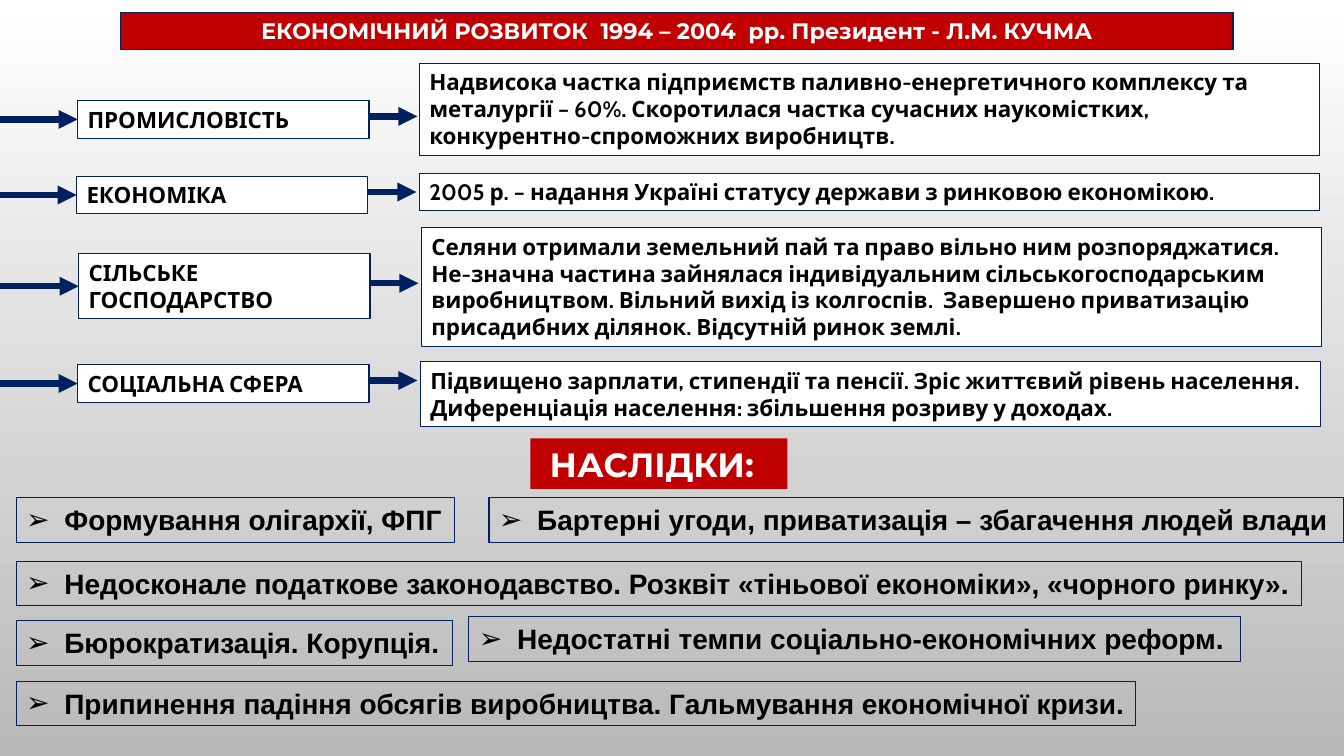
from dataclasses import dataclass
from lxml.etree import SubElement as Sub
from pptx import Presentation as Deck
from pptx.dml.color import RGBColor as Rgb
from pptx.enum.shapes import MSO_CONNECTOR as Link, MSO_SHAPE as Form
from pptx.enum.text import MSO_ANCHOR as Anchor, MSO_AUTO_SIZE as Auto, PP_ALIGN as Align
from pptx.oxml.ns import qn
from pptx.shapes.autoshape import Shape
from pptx.shapes.connector import Connector as Arrow
from pptx.slide import Slide
from pptx.util import Inches, Pt

HUES = {"red": "C00000", "navy": "002060", "white": "FFFFFF", "black": "000000", "grey": "B9B9B9"}


@dataclass(frozen=True)
class Style:
    font: str
    size: int
    ink: str = "black"
    fill: str | None = None
    edge: bool = True
    wrap: bool = True
    align: Align = Align.LEFT
    mark: str | None = None


@dataclass(frozen=True)
class Box:
    left: float
    top: float
    width: float
    height: float
    text: str


@dataclass(frozen=True)
class Row:
    label: Box
    fact: Box


TITLE = Style("Montserrat", 16, "white", "red", align=Align.CENTER)
HEAD = Style("Montserrat", 24, "white", "red", edge=False, wrap=False)
CARD = Style("Cabin", 16, fill="white")
POINT = Style("Arial", 20, wrap=False, mark="➢")

LABEL_W, FACT_W, POINT_H = 2.89, 8.93, 0.44
IN_LEN, OUT_LEN, OUT_RISE = 0.78, 0.48, 0.03

ROWS = [
    Row(Box(0.77, 1, LABEL_W, 0.37, "ПРОМИСЛОВІСТЬ"),
        Box(4.16, 0.63, FACT_W, 0.91,
            "Надвисока частка підприємств паливно-енергетичного комплексу та металургії – 60%. "
            "Скоротилася частка сучасних наукомістких, конкурентно-спроможних виробництв.")),
    Row(Box(0.76, 1.75, LABEL_W, 0.37, "ЕКОНОМІКА"),
        Box(4.16, 1.72, FACT_W, 0.37,
            "2005 р. – надання Україні статусу держави з ринковою економікою.")),
    Row(Box(0.78, 2.52, LABEL_W, 0.64, "СІЛЬСЬКЕ ГОСПОДАРСТВО"),
        Box(4.18, 2.26, FACT_W, 1.18,
            "Селяни отримали земельний пай та право вільно ним розпоряджатися. "
            "Не-значна частина зайнялася індивідуальним сільськогосподарським виробництвом. "
            "Вільний вихід із колгоспів.  Завершено приватизацію присадибних ділянок. "
            "Відсутній ринок землі.")),
    Row(Box(0.77, 3.62, LABEL_W, 0.37, "СОЦІАЛЬНА СФЕРА"),
        Box(4.17, 3.59, FACT_W, 0.64,
            "Підвищено зарплати, стипендії та пенсії. Зріс життєвий рівень населення. "
            "Диференціація населення: збільшення розриву у доходах.")),
]

POINTS = [
    Box(0.16, 4.94, 4.35, POINT_H, "Формування олігархії, ФПГ"),
    Box(4.85, 4.94, 8.48, POINT_H, "Бартерні угоди, приватизація – збагачення людей влади"),
    Box(0.16, 5.57, 12.75, POINT_H,
        "Недосконале податкове законодавство. Розквіт «тіньової економіки», «чорного ринку»."),
    Box(0.16, 6.16, 4.33, POINT_H, "Бюрократизація. Корупція."),
    Box(4.65, 6.12, 7.65, POINT_H, "Недостатні темпи соціально-економічних реформ."),
    Box(0.16, 6.76, 11.1, POINT_H,
        "Припинення падіння обсягів виробництва. Гальмування економічної кризи."),
]


def hue(name: str) -> Rgb:
    return Rgb.from_string(HUES[name])


def apply(item: object, values: dict[str, object]) -> None:
    for key, value in values.items():
        setattr(item, key, value)


def draw_box(slide: Slide, box: Box, style: Style) -> Shape:
    shape = slide.shapes.add_shape(Form.RECTANGLE, Inches(box.left), Inches(box.top),
                                   Inches(box.width), Inches(box.height))
    shape.shadow.inherit = False
    if style.fill:
        shape.fill.solid()
        shape.fill.fore_color.rgb = hue(style.fill)
    else:
        shape.fill.background()
    if style.edge:
        shape.line.color.rgb = hue("navy")
        shape.line.width = Pt(0.75)
    else:
        shape.line.fill.background()
    frame = shape.text_frame
    apply(frame, {"text": box.text, "word_wrap": style.wrap,
                  "auto_size": Auto.SHAPE_TO_FIT_TEXT, "vertical_anchor": Anchor.TOP})
    para = frame.paragraphs[0]
    para.alignment = style.align
    if style.mark:
        props = para._p.get_or_add_pPr()
        indent = Inches(0.38)
        props.set("marL", str(indent))
        props.set("indent", str(-indent))
        Sub(props, qn("a:buFont")).set("typeface", style.font)
        Sub(props, qn("a:buChar")).set("char", style.mark)
    font = para.runs[0].font
    apply(font, {"name": style.font, "size": Pt(style.size), "bold": True})
    font.color.rgb = hue(style.ink)
    return shape


def draw_arrow(slide: Slide, start: float, end: float, level: float) -> Arrow:
    arrow = slide.shapes.add_connector(Link.STRAIGHT, Inches(start), Inches(level),
                                       Inches(end), Inches(level))
    arrow.line.color.rgb = hue("navy")
    arrow.line.width = Pt(4.5)
    Sub(arrow.line._get_or_add_ln(), qn("a:tailEnd")).set("type", "triangle")
    Sub(arrow._element.spPr, qn("a:effectLst"))
    return arrow


def draw_row(slide: Slide, row: Row) -> None:
    draw_box(slide, row.fact, CARD)
    label = row.label
    shape = draw_box(slide, label, CARD)
    mid, right = label.top + label.height / 2, label.left + label.width
    entry = draw_arrow(slide, label.left - IN_LEN, label.left, mid)
    entry.end_connect(shape, 1)
    draw_arrow(slide, right, right + OUT_LEN, mid - OUT_RISE)


def paint_back(slide: Slide) -> None:
    fill = slide.background.fill
    fill.gradient()
    fill.gradient_angle = 270
    for stop, name, place in zip(fill.gradient_stops, ("white", "grey"), (0, 1)):
        stop.color.rgb = hue(name)
        stop.position = place


def main() -> None:
    deck = Deck()
    apply(deck, {"slide_width": Inches(13.33), "slide_height": Inches(7.5)})
    slide = deck.slides.add_slide(deck.slide_layouts[6])
    paint_back(slide)
    draw_box(slide, Box(1.2, 0.12, 11.03, 0.37,
                        "ЕКОНОМІЧНИЙ РОЗВИТОК  1994 – 2004  рр. Президент - Л.М. КУЧМА"), TITLE)
    for row in ROWS:
        draw_row(slide, row)
    draw_box(slide, Box(5.26, 4.35, 2.55, 0.5, " НАСЛІДКИ:"), HEAD)
    for point in POINTS:
        draw_box(slide, point, POINT)
    deck.save("out.pptx")


if __name__ == "__main__":
    main()
